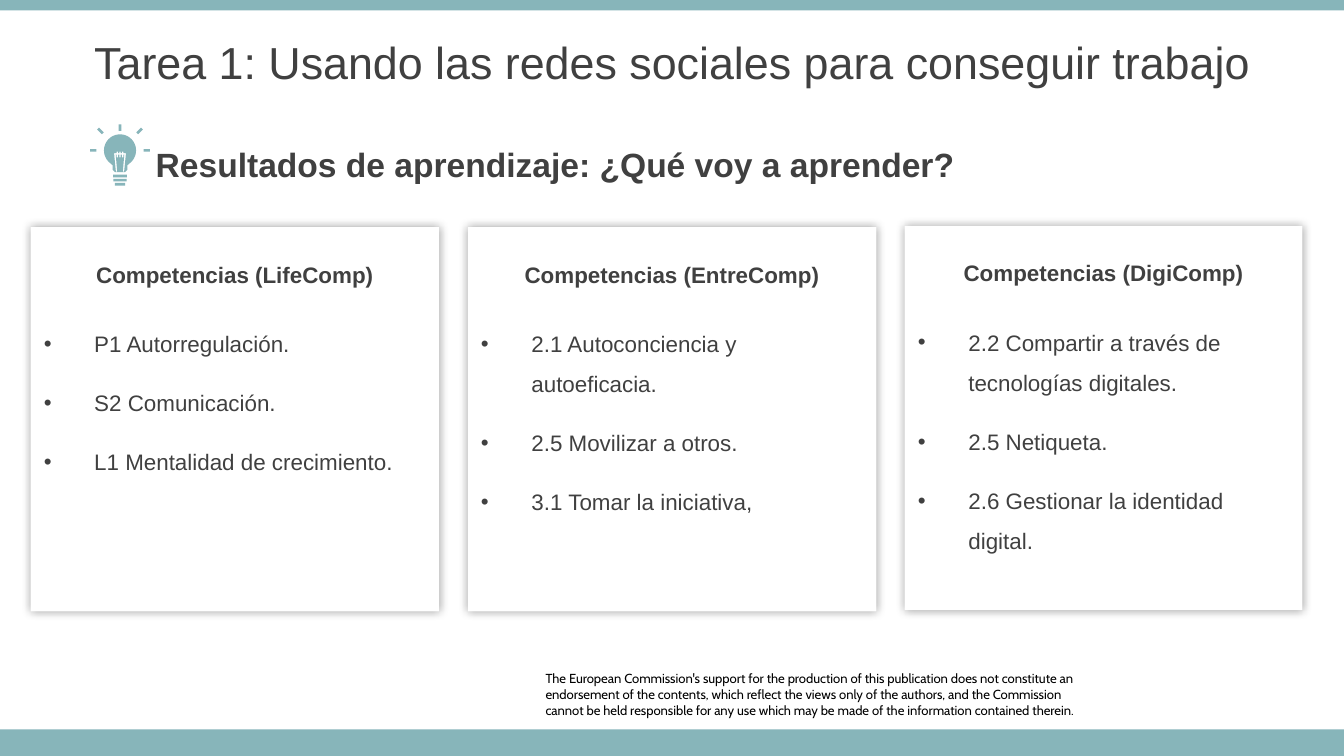
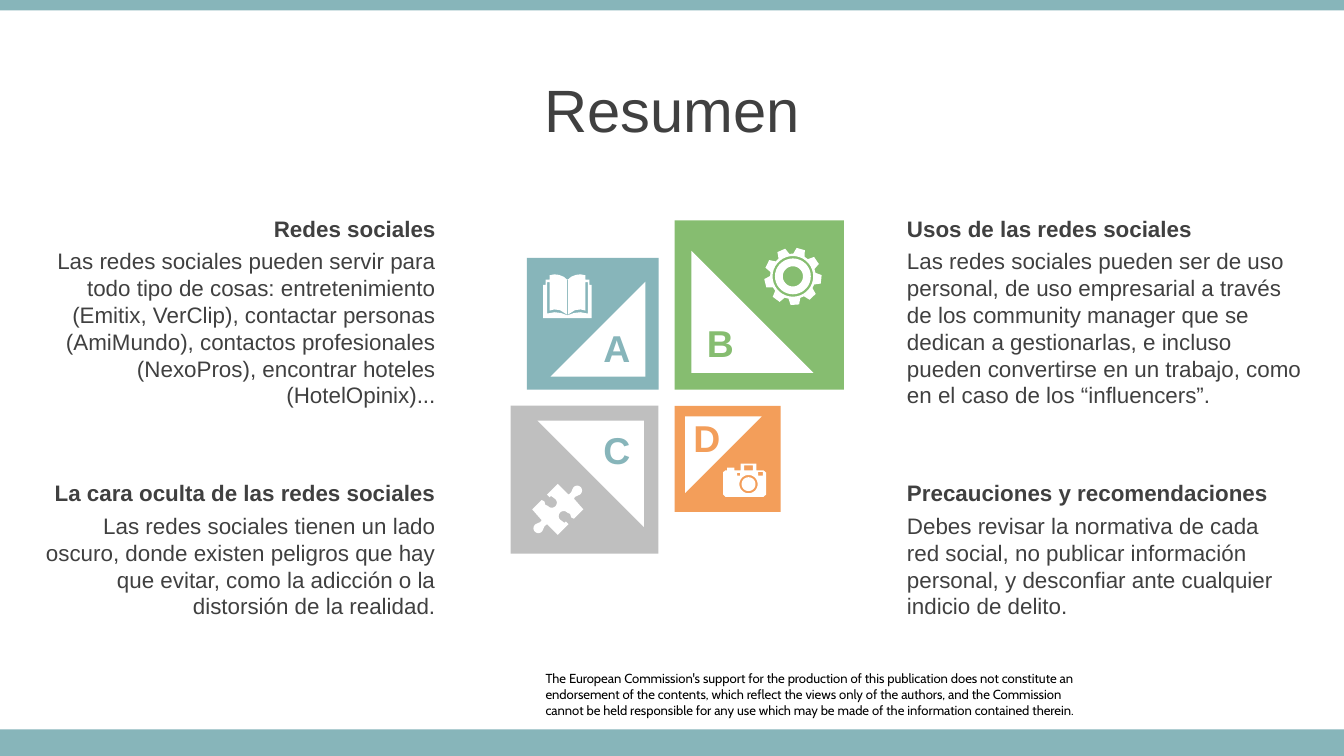
from dataclasses import dataclass
from math import cos, radians, sin

from lxml.etree import SubElement
from pptx import Presentation
from pptx.dml.color import RGBColor
from pptx.enum.shapes import MSO_SHAPE
from pptx.enum.text import MSO_ANCHOR, PP_ALIGN
from pptx.oxml.ns import qn
from pptx.util import Pt


@dataclass(frozen=True)
class Theme:
    """Colours, fonts and type sizes of the deck."""

    teal: str = "87B5BA"
    green: str = "86BD70"
    orange: str = "F39E5A"
    grey: str = "BFBFBF"
    white: str = "FFFFFF"
    ink: str = "404040"
    black: str = "000000"
    font: str = "Arial"
    note_font: str = "Cabin"
    title: int = 24
    big_title: int = 32
    letter: int = 20
    heading: int = 18
    body: int = 12
    note: int = 7


WIDTH, HEIGHT = 720, 405
DISCLAIMER = [
    "The European Commission's support for the production of this publication does not constitute an "
    "endorsement of the contents, which reflect the views only of the authors, and the Commission",
    "cannot be held responsible for any use which may be made of the information contained therein.",
]


def arc(x, y, radius, start=0, end=360, steps=36):
    """Return points along an arc, with angles in degrees."""
    angles = [radians(start + (end - start) * i / steps) for i in range(steps + 1)]
    return [(x + radius * cos(a), y + radius * sin(a)) for a in angles]


def block(x, y, width, height):
    """Return the corners of a rectangle."""
    return [(x, y), (x + width, y), (x + width, y + height), (x, y + height)]


def mirror(points, axis):
    """Return the points reflected across a vertical axis."""
    return [(2 * axis - x, y) for x, y in reversed(points)]


def bulb_contours():
    """Return the outlines of a light bulb with its rays."""
    x, y = 64.3, 80.6
    glass = arc(x, y, 8.6, 135, 405) + [
        (68.2, 88.6), (68.2, 91), (67, 92.2), (61.6, 92.2), (60.4, 91), (60.4, 88.6)]
    teeth = [x - 1.8, x - 0.4, x + 1]
    upper = [p for t in teeth for p in [(t, 82), (t, 81.3), (t + 0.8, 81.3), (t + 0.8, 82)]]
    lower = [p for t in reversed(teeth)
             for p in [(t + 0.8, 82.8), (t + 0.8, 84.3), (t, 84.3), (t, 82.8)]]
    filament = ([(61.1, 82)] + upper + [(67.5, 82), (66.5, 92), (65.8, 92), (66.6, 82.8)]
                + lower + [(62, 82.8), (62.8, 92), (62.1, 92)])
    bars = [block(60.6 + inset, top, 7.4 - 2 * inset, 1.4)
            for inset, top in [(0, 93.6), (0.2, 95.8), (1, 98)]]
    rays = []
    for angle, near, far in [(180, 12.6, 16), (225, 13, 16.6), (270, 10.4, 14), (315, 13, 16.6), (0, 12.6, 16)]:
        dx, dy = cos(radians(angle)), sin(radians(angle))
        rays.append([(x + r * dx - s * dy, y + r * dy + s * dx)
                     for r, s in [(near, -0.7), (far, -0.7), (far, 0.7), (near, 0.7)]])
    return [glass, filament] + bars + rays


def gear_contours():
    """Return the outlines of a nine-tooth gear."""
    x, y = 424.8, 148.1
    teeth = []
    for angle in range(-74, 286, 40):
        for offset, radius in [(-15, 12.2), (-8.5, 15.4), (8.5, 15.4), (15, 12.2)]:
            teeth += arc(x, y, radius, angle + offset, angle + offset, 1)[:1]
    return [teeth] + [arc(x, y, radius) for radius in (10.9, 9.6, 5.4)]


def book_contours():
    """Return the outlines of an open book."""
    axis = 304
    cover = [(axis, 170.4), (291, 170.4), (291, 152.7), (292.3, 152.7), (292.3, 149.8),
             (294.4, 149.8), (294.4, 147.5), (297, 147), (299.5, 147.3), (302, 148.3), (axis, 150)]
    gap = [(293.1, 151.2), (294.4, 151.2), (294.4, 166.4), (297, 165.8), (300, 166.2),
           (303.7, 168.5), (303.7, 150), (304, 150), (304, 169), (300.5, 167.7), (297, 167.3), (293.1, 168)]
    return [cover + mirror(cover, axis), gap, mirror(gap, axis)]


def puzzle_contours():
    """Return the outline of a puzzle piece, one half turned onto the other."""
    x, y = 298.8, 272.9
    half = ([(0, -13.7), (5.8, -7.9), (7.2, -9.2)] + arc(10.4, -10.1, 2.6, 200, 430)
            + [(9.4, -6.8), (8.6, -5.8), (13.7, 0), (8.6, 5), (7.2, 4.3), (6.6, 2.4)]
            + arc(3.2, 3.6, 2.7, -40, -230) + [(3.6, 7.2), (4.3, 6.5), (5.8, 7.9)])
    return [[(x + side * dx, y + side * dy) for side in (1, -1) for dx, dy in half]]


def camera_contours():
    """Return the outlines of a camera."""
    body = [(387.4, 253), (388.6, 252), (389.5, 252), (389.5, 250.6), (393.4, 250.6), (393.4, 252),
            (396.8, 252), (396.8, 248.4), (405.2, 248.4), (405.2, 252), (409, 252), (410.4, 253.2),
            (410.4, 265), (409, 266.2), (388.6, 266.2), (387.4, 265)]
    windows = [block(394.9, 253.4, 1.6, 1.4), block(406.1, 252.9, 2.6, 2), block(398.7, 249.4, 4.6, 2.6)]
    return [body] + windows + [arc(401, 259.4, radius) for radius in (4.9, 3.7)]


class SlideBuilder:
    """Hold the style and the slide being drawn."""

    def __init__(self, theme):
        """Start an empty deck."""
        self.theme = theme
        self.deck = Presentation()
        self.deck.slide_width, self.deck.slide_height = Pt(WIDTH), Pt(HEIGHT)
        self.page = None

    def new_page(self):
        """Add a page with the disclaimer and the two bands."""
        self.page = self.deck.slides.add_slide(self.deck.slide_layouts[6])
        note = self.text(DISCLAIMER, 292.3, 359.3, 300.2, 25.2, size=self.theme.note,
                         color=self.theme.black, font=self.theme.note_font)
        frame = note.text_frame
        frame.margin_left = frame.margin_right = frame.margin_top = frame.margin_bottom = 0
        self.shape(0, 390.8, WIDTH, 14.2, self.theme.teal)
        self.shape(0, 0, WIDTH, 5.6, self.theme.teal)

    def paint(self, shape, color):
        """Give a shape a plain fill without line or shadow."""
        shape.shadow.inherit = False
        shape.fill.solid()
        shape.fill.fore_color.rgb = RGBColor.from_string(color)
        shape.line.fill.background()
        return shape

    def shape(self, left, top, width, height, color, kind=MSO_SHAPE.RECTANGLE, rotation=0):
        """Draw a preset shape."""
        shape = self.page.shapes.add_shape(kind, Pt(left), Pt(top), Pt(width), Pt(height))
        shape.rotation = rotation
        return self.paint(shape, color)

    def icon(self, contours, color):
        """Draw one outline made of several closed contours."""
        first, *others = [[(Pt(x), Pt(y)) for x, y in contour] for contour in contours]
        builder = self.page.shapes.build_freeform(*first[0], scale=1.0)
        builder.add_line_segments(first[1:], close=True)
        for contour in others:
            builder.move_to(*contour[0])
            builder.add_line_segments(contour[1:], close=True)
        return self.paint(builder.convert_to_shape(), color)

    def style(self, para, size, color, bold=False, font=None, align=PP_ALIGN.LEFT):
        """Format a paragraph and its runs."""
        para.alignment = align
        for span in para.runs:
            span.font.name = font or self.theme.font
            span.font.size = Pt(size)
            span.font.bold = bold
            span.font.color.rgb = RGBColor.from_string(color)

    def text(self, lines, left, top, width, height, size=None, color=None, bold=False,
             font=None, align=PP_ALIGN.LEFT, anchor=MSO_ANCHOR.TOP):
        """Place a wrapped text box."""
        box = self.page.shapes.add_textbox(Pt(left), Pt(top), Pt(width), Pt(height))
        frame = box.text_frame
        frame.word_wrap = True
        frame.vertical_anchor = anchor
        frame.text = "\n".join(lines)
        for para in frame.paragraphs:
            self.style(para, size or self.theme.body, color or self.theme.ink, bold, font, align)
        return box

    def title(self, words, top, size):
        """Place a centred title across the page."""
        self.text([words], 0, top, WIDTH, 45.4, size, align=PP_ALIGN.CENTER, anchor=MSO_ANCHOR.MIDDLE)

    def card(self, heading, items, left, top, width):
        """Draw a shadowed card with a heading and bullets."""
        card = self.shape(left, top, width, 205.9, self.theme.white)
        effects = card.element.spPr.find(qn("a:effectLst"))
        shadow = SubElement(effects, qn("a:outerShdw"), blurRad=str(Pt(5)), dist="0", dir="0", algn="ctr")
        tint = SubElement(shadow, qn("a:srgbClr"), val=self.theme.black)
        SubElement(tint, qn("a:alpha"), val="40000")
        frame = card.text_frame
        frame.word_wrap = True
        frame.vertical_anchor = MSO_ANCHOR.TOP
        frame.margin_top = Pt(18)
        frame.text = "\n".join([heading] + items)
        first, *bullets = frame.paragraphs
        self.style(first, self.theme.body, self.theme.ink, True, align=PP_ALIGN.CENTER)
        first.space_after = Pt(15.5)
        for para in bullets:
            self.bullet(para)

    def bullet(self, para):
        """Turn a paragraph into a hanging bullet."""
        props = para._p.get_or_add_pPr()
        props.set("marL", str(Pt(27)))
        props.set("indent", str(-Pt(27)))
        SubElement(props, qn("a:buFont"), typeface=self.theme.font)
        SubElement(props, qn("a:buChar"), char="•")
        para.line_spacing = 1.5
        para.space_after = Pt(10)
        self.style(para, self.theme.body, self.theme.ink)

    def tile(self, side, color, column, row, rotation):
        """Draw a square and its triangle in one quarter of the pinwheel."""
        middle_x, middle_y, half_gap = 357.1, 213.1, 4.3
        for size, inset, fill, kind, turn in [
                (side, 0, color, MSO_SHAPE.RECTANGLE, 0),
                (side * 0.72, side * 0.1, self.theme.white, MSO_SHAPE.RIGHT_TRIANGLE, rotation)]:
            offset = half_gap + inset
            left = middle_x + offset if column else middle_x - offset - size
            top = middle_y + offset if row else middle_y - offset - size
            self.shape(left, top, size, size, fill, kind, turn)

    def topic(self, heading, words, left, top, width, align):
        """Place a bold heading over a paragraph."""
        self.text([words], left, top + 17.3, width, 94, align=align)
        self.text([heading], left, top, width, 21.6, bold=True, align=align)


def build_outcomes(builder):
    """Build the learning outcomes page."""
    theme = builder.theme
    builder.new_page()
    builder.icon(bulb_contours(), theme.teal)
    builder.text(["Resultados de aprendizaje: ¿Qué voy a aprender?"], 76.3, 77, 493.2, 22.3,
                 theme.heading, bold=True, anchor=MSO_ANCHOR.MIDDLE)
    cards = [
        ("Competencias (LifeComp)", 16.4, 121.7, 218.9,
         ["P1 Autorregulación.", "S2 Comunicación.", "L1 Mentalidad de crecimiento."]),
        ("Competencias (EntreComp)", 250.6, 121.7, 218.9,
         ["2.1 Autoconciencia y autoeficacia.", "2.5 Movilizar a otros.", "3.1 Tomar la iniciativa,"]),
        ("Competencias (DigiComp)", 484.7, 121, 213.1,
         ["2.2 Compartir a través de tecnologías digitales.", "2.5 Netiqueta.",
          "2.6 Gestionar la identidad digital."]),
    ]
    for heading, left, top, width, items in cards:
        builder.card(heading, items, left, top, width)
    builder.title("Tarea 1: Usando las redes sociales para conseguir trabajo", 10.1, theme.title)


def build_summary(builder):
    """Build the summary page."""
    theme = builder.theme
    builder.new_page()
    builder.title("Resumen", 35.3, theme.big_title)
    tiles = [(70.6, theme.teal, 0, 0, 270), (90.7, theme.green, 1, 0, 0),
             (56.9, theme.orange, 1, 1, 90), (79.2, theme.grey, 0, 1, 180)]
    for tile in tiles:
        builder.tile(*tile)
    letters = [("A", 314.6, 170.6, theme.teal), ("B", 370.1, 167.8, theme.green),
               ("C", 314.6, 225.4, theme.teal), ("D", 362.9, 218.9, theme.orange)]
    for letter, left, top, color in letters:
        builder.text([letter], left, top, 31.7, 31.7, theme.letter, color, True, align=PP_ALIGN.CENTER)
    for contours in (book_contours(), puzzle_contours(), gear_contours(), camera_contours()):
        builder.icon(contours, theme.white)
    upper, lower = 111.6, 253.4
    topics = [
        ("Redes sociales",
         "Las redes sociales pueden servir para todo tipo de cosas: entretenimiento (Emitix, VerClip), "
         "contactar personas (AmiMundo), contactos profesionales (NexoPros), encontrar hoteles "
         "(HotelOpinix)...", 20.2, upper, 220.3, PP_ALIGN.RIGHT),
        ("La cara oculta de las redes sociales",
         "Las redes sociales tienen un lado oscuro, donde existen peligros que hay que evitar, como la "
         "adicción o la distorsión de la realidad.", 14.4, lower, 226.1, PP_ALIGN.RIGHT),
        ("Usos de las redes sociales",
         "Las redes sociales pueden ser de uso personal, de uso empresarial a través de los community "
         "manager que se dedican a gestionarlas, e incluso pueden convertirse en un trabajo, como en el "
         "caso de los “influencers”.", 478.8, upper, 226.8, PP_ALIGN.LEFT),
        ("Precauciones y recomendaciones",
         "Debes revisar la normativa de cada red social, no publicar información personal, y desconfiar "
         "ante cualquier indicio de delito.", 478.8, lower, 215.3, PP_ALIGN.LEFT),
    ]
    for topic in topics:
        builder.topic(*topic)


def main():
    """Build and save the deck."""
    builder = SlideBuilder(Theme())
    build_outcomes(builder)
    build_summary(builder)
    builder.deck.save("out.pptx")


if __name__ == "__main__":
    main()
